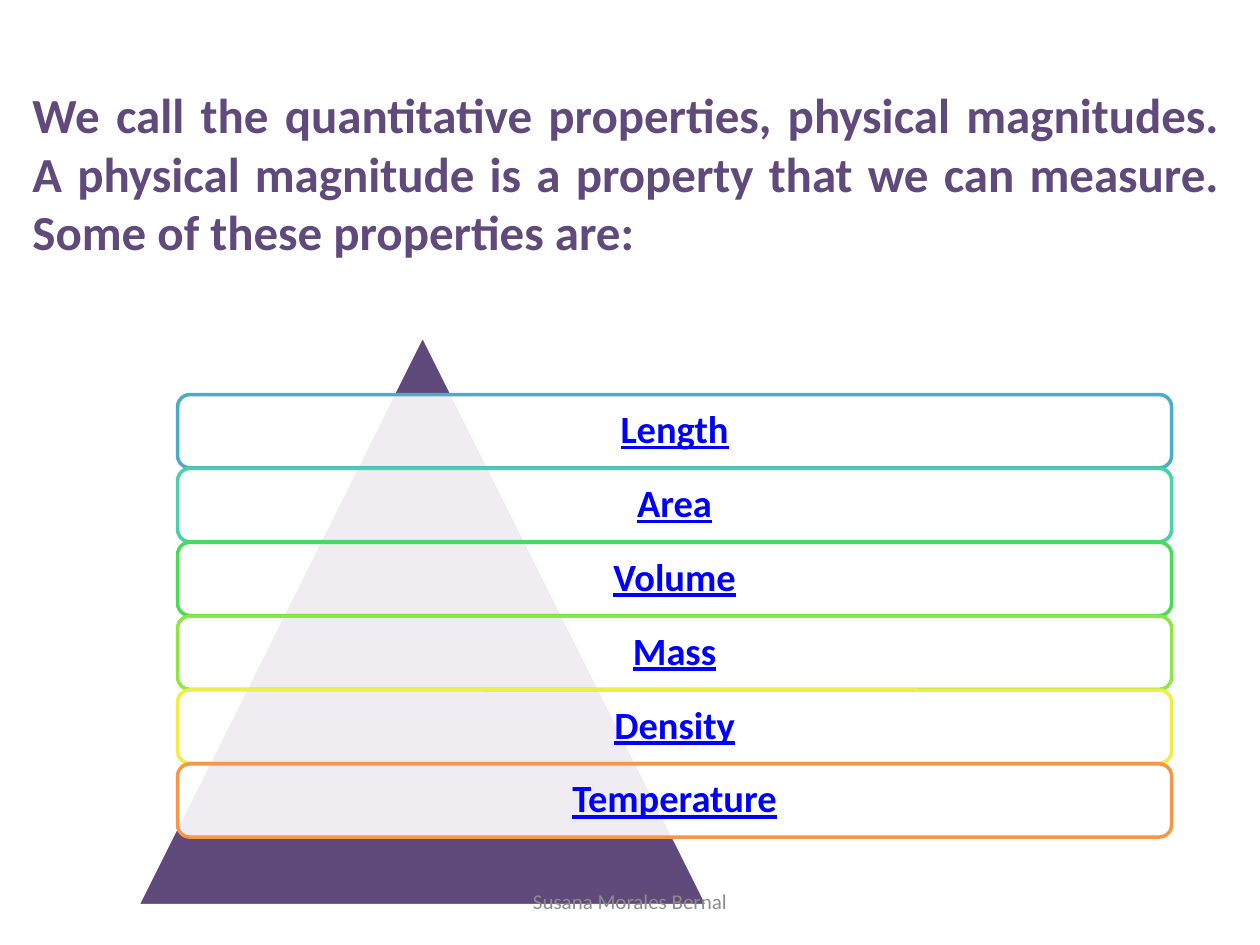
from lxml import etree
from pptx import Presentation
from pptx.dml.color import RGBColor
from pptx.enum.shapes import MSO_SHAPE
from pptx.enum.text import MSO_ANCHOR, PP_ALIGN
from pptx.oxml.ns import qn
from pptx.util import Pt

PURPLE = "604A7B"
WHITE = "FFFFFF"


def color(hex_code):
    return RGBColor.from_string(hex_code)


def write(shape, text, size, hex_code, align, bold=False, underline=False):
    frame = shape.text_frame
    frame.word_wrap = True
    frame.text = text
    paragraph = frame.paragraphs[0]
    paragraph.alignment = align
    font = paragraph.runs[0].font
    font.name = "Calibri"
    font.size = Pt(size)
    font.bold = bold
    font.underline = underline
    font.color.rgb = color(hex_code)
    return frame


prs = Presentation()
prs.slide_width = Pt(720)
prs.slide_height = Pt(540)
slide = prs.slides.add_slide(prs.slide_layouts[6])
shapes = slide.shapes

pyramid = shapes.add_shape(
    MSO_SHAPE.ISOSCELES_TRIANGLE, Pt(78.5), Pt(191.5), Pt(326), Pt(326))
pyramid.shadow.inherit = False
pyramid.fill.solid()
pyramid.fill.fore_color.rgb = color(PURPLE)
pyramid.line.color.rgb = color(WHITE)
pyramid.line.width = Pt(2)

magnitudes = [
    ("Length", "4BACC6"),
    ("Area", "49D1A3"),
    ("Volume", "47DC57"),
    ("Mass", "8DE646"),
    ("Density", "EEEF46"),
    ("Temperature", "F79646"),
]
for row, (magnitude, outline) in enumerate(magnitudes):
    bar = shapes.add_shape(
        MSO_SHAPE.ROUNDED_RECTANGLE,
        Pt(101.5), Pt(225.5 + 42.2 * row), Pt(568), Pt(41.8))
    bar.shadow.inherit = False
    bar.fill.solid()
    bar.fill.fore_color.rgb = color(WHITE)
    fill_color = bar.fill._xPr.find(qn("a:solidFill"))[0]
    etree.SubElement(fill_color, qn("a:alpha"), val="90000")
    bar.line.color.rgb = color(outline)
    bar.line.width = Pt(2)
    label = write(bar, magnitude, 22, "0000FF", PP_ALIGN.CENTER,
                  bold=True, underline=True)
    label.vertical_anchor = MSO_ANCHOR.MIDDLE
    label.margin_left = label.margin_right = Pt(6.6)
    label.margin_top = label.margin_bottom = Pt(6.6)
    label.paragraphs[0].line_spacing = 0.9

definition = shapes.add_textbox(Pt(11.5), Pt(44.6), Pt(692), Pt(108.7))
write(definition,
      "We call the quantitative properties, physical magnitudes. "
      "A physical magnitude is a property that we can measure. "
      "Some of these properties are: ",
      28, PURPLE, PP_ALIGN.JUSTIFY, bold=True)

footer = shapes.add_textbox(Pt(246), Pt(500.5), Pt(228), Pt(28.75))
author = write(footer, "Susana Morales Bernal", 12, "8C8C8C", PP_ALIGN.CENTER)
author.vertical_anchor = MSO_ANCHOR.MIDDLE

prs.save("out.pptx")
